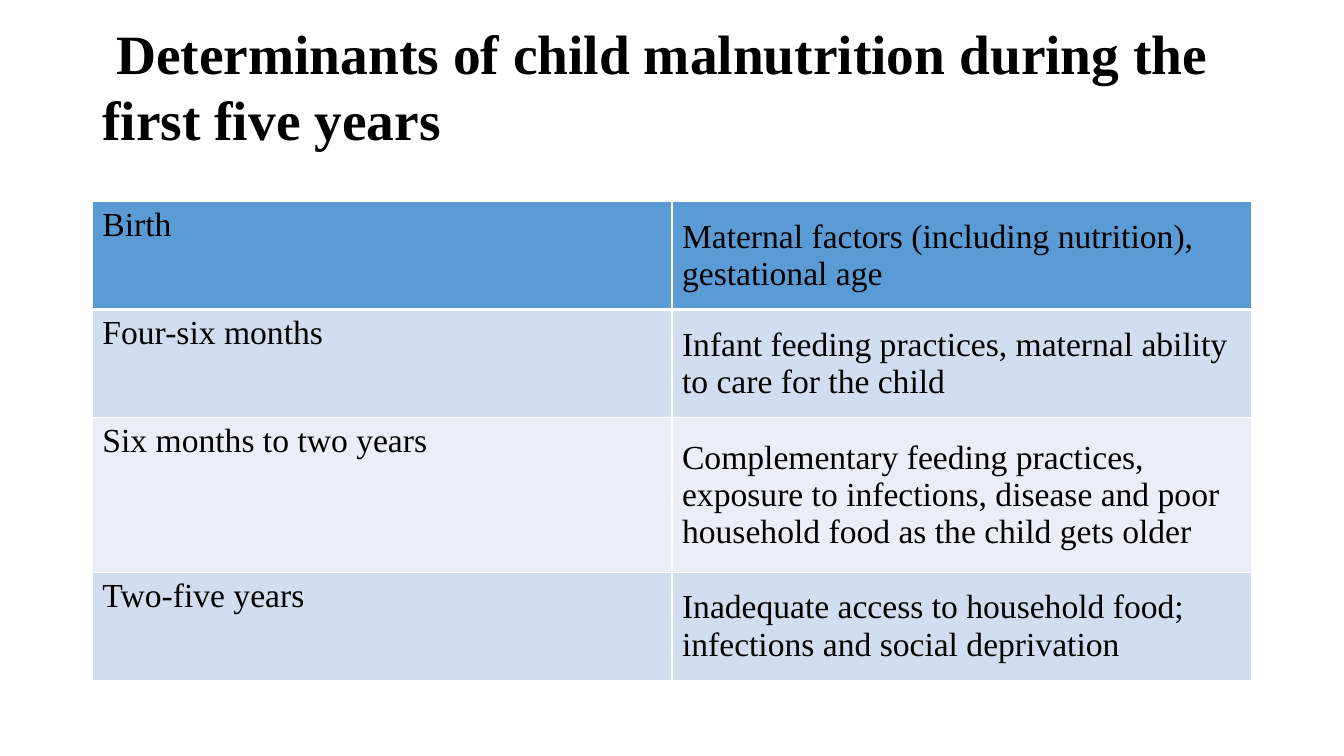
from lxml import etree
from pptx import Presentation
from pptx.dml.color import RGBColor
from pptx.enum.text import MSO_ANCHOR as Anchor
from pptx.oxml.ns import qn
from pptx.util import Pt

FONT = "Times New Roman"
BLACK = RGBColor(0x00, 0x00, 0x00)
WHITE = RGBColor(0xFF, 0xFF, 0xFF)
HEADER_BLUE = RGBColor(0x5B, 0x9B, 0xD5)
BAND_DARK = RGBColor(0xD2, 0xDE, 0xEF)
BAND_LIGHT = RGBColor(0xEA, 0xEF, 0xF7)

TITLE = " Determinants of child malnutrition during the first five years"
DETERMINANTS = [
    ("Birth", "Maternal factors (including nutrition), gestational age"),
    ("Four-six months",
     "Infant feeding practices, maternal ability to care for the child"),
    ("Six months to two years",
     "Complementary feeding practices, exposure to infections, disease and "
     "poor household food as the child gets older"),
    ("Two-five years",
     "Inadequate access to household food; infections and social deprivation"),
]
ROW_HEIGHTS = [77.1, 77.1, 110.6, 77.1]


def format_text(paragraph, size, bold=False):
    for run in paragraph.runs:
        run.font.name = FONT
        run.font.size = Pt(size)
        run.font.bold = bold
        run.font.color.rgb = BLACK


def set_borders(cell, top, bottom):
    """Draw white cell borders; widths are in points."""
    properties = cell._tc.get_or_add_tcPr()
    widths = {"a:lnL": 1, "a:lnR": 1, "a:lnT": top, "a:lnB": bottom}
    for position, (tag, width) in enumerate(widths.items()):
        line = etree.Element(qn(tag), w=str(Pt(width)))
        fill = etree.SubElement(line, qn("a:solidFill"))
        etree.SubElement(fill, qn("a:srgbClr"), val=str(WHITE))
        properties.insert(position, line)


def add_title(slide, left, top, width, height):
    text_frame = slide.shapes.add_textbox(
        Pt(left), Pt(top), Pt(width), Pt(height)).text_frame
    text_frame.word_wrap = True
    text_frame.vertical_anchor = Anchor.TOP
    text_frame.text = TITLE
    paragraph = text_frame.paragraphs[0]
    paragraph.line_spacing = 0.98
    format_text(paragraph, 39.6, bold=True)


def add_determinants_table(slide, left, top, width):
    table = slide.shapes.add_table(
        len(DETERMINANTS), 2, Pt(left), Pt(top), Pt(width),
        Pt(sum(ROW_HEIGHTS))).table
    for column in table.columns:
        column.width = Pt(width / 2)
    for row_index, texts in enumerate(DETERMINANTS):
        table.rows[row_index].height = Pt(ROW_HEIGHTS[row_index])
        # Header first, then alternating bands
        if row_index == 0:
            color = HEADER_BLUE
        else:
            color = BAND_DARK if row_index % 2 else BAND_LIGHT
        for column_index, text in enumerate(texts):
            cell = table.cell(row_index, column_index)
            cell.text_frame.text = text
            format_text(cell.text_frame.paragraphs[0], 24)
            cell.vertical_anchor = Anchor.MIDDLE if column_index else Anchor.TOP
            cell.fill.solid()
            cell.fill.fore_color.rgb = color
            set_borders(cell, top=3 if row_index == 1 else 1,
                        bottom=3 if row_index == 0 else 1)


def main():
    presentation = Presentation()
    presentation.slide_width = Pt(960)
    presentation.slide_height = Pt(540)
    slide = presentation.slides.add_slide(presentation.slide_layouts[6])
    add_title(slide, 66, 12.7, 828, 94)
    add_determinants_table(slide, 66, 144, 828)
    presentation.save("out.pptx")


if __name__ == "__main__":
    main()
